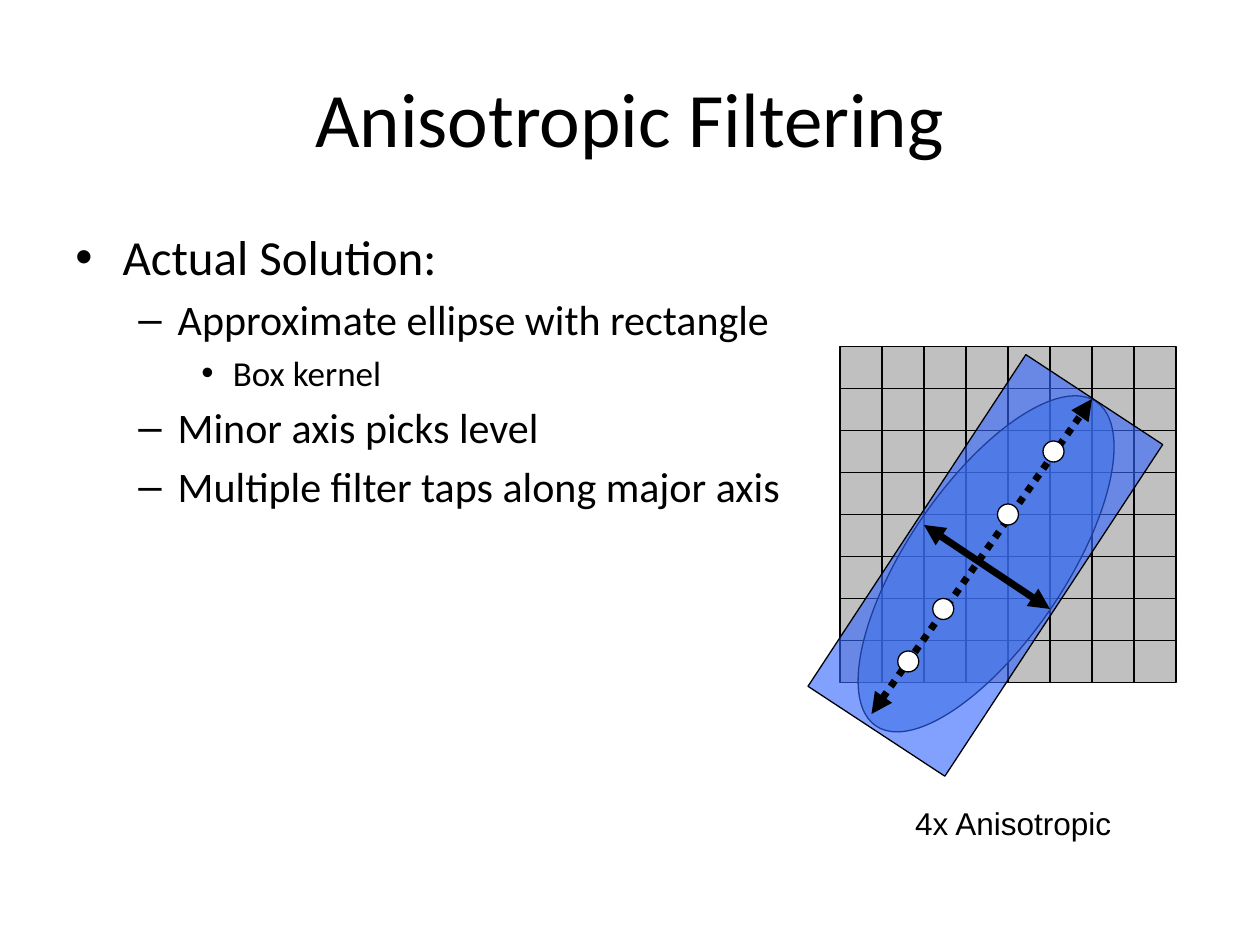
from dataclasses import dataclass
from itertools import product

from lxml.etree import SubElement
from pptx import Presentation
from pptx.dml.color import RGBColor
from pptx.enum.dml import MSO_LINE_DASH_STYLE as Dash
from pptx.enum.shapes import MSO_CONNECTOR as Connector, MSO_SHAPE as Shape
from pptx.enum.text import MSO_ANCHOR as Anchor, PP_ALIGN as Align
from pptx.oxml.ns import qn
from pptx.util import Pt

COLORS = {
    "ink": "000000",
    "texel": "C0C0C0",
    "ellipse": "4F81BD",
    "kernel": "3366FF",
    "tap": "FFFFFF",
}
GRID_LEFT, GRID_TOP, TEXEL, GRID_COUNT = 480, 198, 24, 8
TAP_SIZE = 12


@dataclass
class Level:
    bullet: str
    size: float
    margin: float
    hanging: float


@dataclass
class Item:
    text: str
    level: int


@dataclass
class Region:
    kind: Shape
    left: float
    top: float
    width: float
    height: float
    fill: str
    rotation: float = 0
    opacity: int = 100


@dataclass
class Axis:
    start: tuple[float, float]
    end: tuple[float, float]
    dash: Dash


LEVELS = [
    Level("•", 28, 27, 27),
    Level("–", 24, 58.5, 22.5),
    Level("•", 20, 90, 18),
]
ITEMS = [
    Item("Actual Solution:", 0),
    Item("Approximate ellipse with rectangle", 1),
    Item("Box kernel", 2),
    Item("Minor axis picks level", 1),
    Item("Multiple filter taps along major axis", 1),
]
FOOTPRINT = [
    Region(Shape.OVAL, 451.5, 277.2, 224, 90, "ellipse", 304.2, 58),
    Region(Shape.RECTANGLE, 449.7, 276.3, 226.8, 93.6, "kernel", 303.3, 61),
]
AXES = [
    Axis((498, 408), (624, 228), Dash.ROUND_DOT),
    Axis((528, 300), (600, 348), Dash.SOLID),
]
TAPS = [(533, 342), (570, 288), (596, 252), (513, 372)]


def color(name: str) -> RGBColor:
    return RGBColor.from_string(COLORS[name])


def style_text(para, size: float, font: str) -> None:
    for span in para.runs:
        span.font.size = Pt(size)
        span.font.name = font
        span.font.color.rgb = color("ink")


def add_bullet(para, item: Item) -> None:
    level = LEVELS[item.level]
    para.text = item.text
    para.level = item.level
    para.space_before = Pt(level.size * 0.2)
    style_text(para, level.size, "Calibri")
    props = para._p.get_or_add_pPr()
    props.set("marL", str(Pt(level.margin)))
    props.set("indent", str(-Pt(level.hanging)))
    SubElement(props, qn("a:buFont")).set("typeface", "Arial")
    SubElement(props, qn("a:buChar")).set("char", level.bullet)


def draw_region(shapes, region: Region) -> None:
    box = shapes.add_shape(region.kind, Pt(region.left), Pt(region.top),
                           Pt(region.width), Pt(region.height))
    box.shadow.inherit = False
    box.rotation = region.rotation
    box.fill.solid()
    box.fill.fore_color.rgb = color(region.fill)
    box.line.color.rgb = color("ink")
    box.line.width = Pt(0.75)
    if region.opacity < 100:
        tint = box._element.spPr.find(qn("a:solidFill"))[0]
        SubElement(tint, qn("a:alpha")).set("val", str(region.opacity * 1000))


def draw_axis(shapes, axis: Axis) -> None:
    arrow = shapes.add_connector(Connector.STRAIGHT,
                                 *map(Pt, axis.start + axis.end))
    arrow.line.color.rgb = color("ink")
    arrow.line.width = Pt(4)
    arrow.line.dash_style = axis.dash
    line = arrow.line._get_or_add_ln()
    for end in ("a:headEnd", "a:tailEnd"):
        SubElement(line, qn(end)).set("type", "triangle")
    SubElement(arrow._element.spPr, qn("a:effectLst"))


def main() -> None:
    deck = Presentation()
    deck.slide_width, deck.slide_height = Pt(720), Pt(540)
    page = deck.slides.add_slide(deck.slide_layouts[5])
    shapes = page.shapes

    # Title
    title = shapes.title
    title.left, title.top, title.width, title.height = map(
        Pt, (36, 21.6, 648, 90))
    title.text_frame.text = "Anisotropic Filtering"
    title.text_frame.vertical_anchor = Anchor.MIDDLE
    title.text_frame.paragraphs[0].alignment = Align.CENTER
    style_text(title.text_frame.paragraphs[0], 44, "Calibri")

    # Bullet list, wide enough to keep each item on one line
    body = shapes.add_textbox(Pt(36), Pt(126), Pt(424), Pt(356.4)).text_frame
    body.word_wrap = True
    for index, item in enumerate(ITEMS):
        para = body.add_paragraph() if index else body.paragraphs[0]
        add_bullet(para, item)

    # Texel grid
    grid = shapes.add_group_shape()
    for row, column in product(range(GRID_COUNT), repeat=2):
        draw_region(grid.shapes, Region(
            Shape.RECTANGLE, GRID_LEFT + column * TEXEL,
            GRID_TOP + row * TEXEL, TEXEL, TEXEL, "texel"))

    # Pixel footprint, its axes and the filter taps
    for region in FOOTPRINT:
        draw_region(shapes, region)
    for axis in AXES:
        draw_axis(shapes, axis)
    for left, top in TAPS:
        draw_region(shapes, Region(
            Shape.OVAL, left, top, TAP_SIZE, TAP_SIZE, "tap"))

    # Caption
    caption = shapes.add_textbox(Pt(486), Pt(456), Pt(186), Pt(28.8)).text_frame
    caption.word_wrap = True
    caption.text = "4x Anisotropic"
    caption.paragraphs[0].alignment = Align.CENTER
    style_text(caption.paragraphs[0], 18, "Arial")

    deck.save("out.pptx")


if __name__ == "__main__":
    main()
